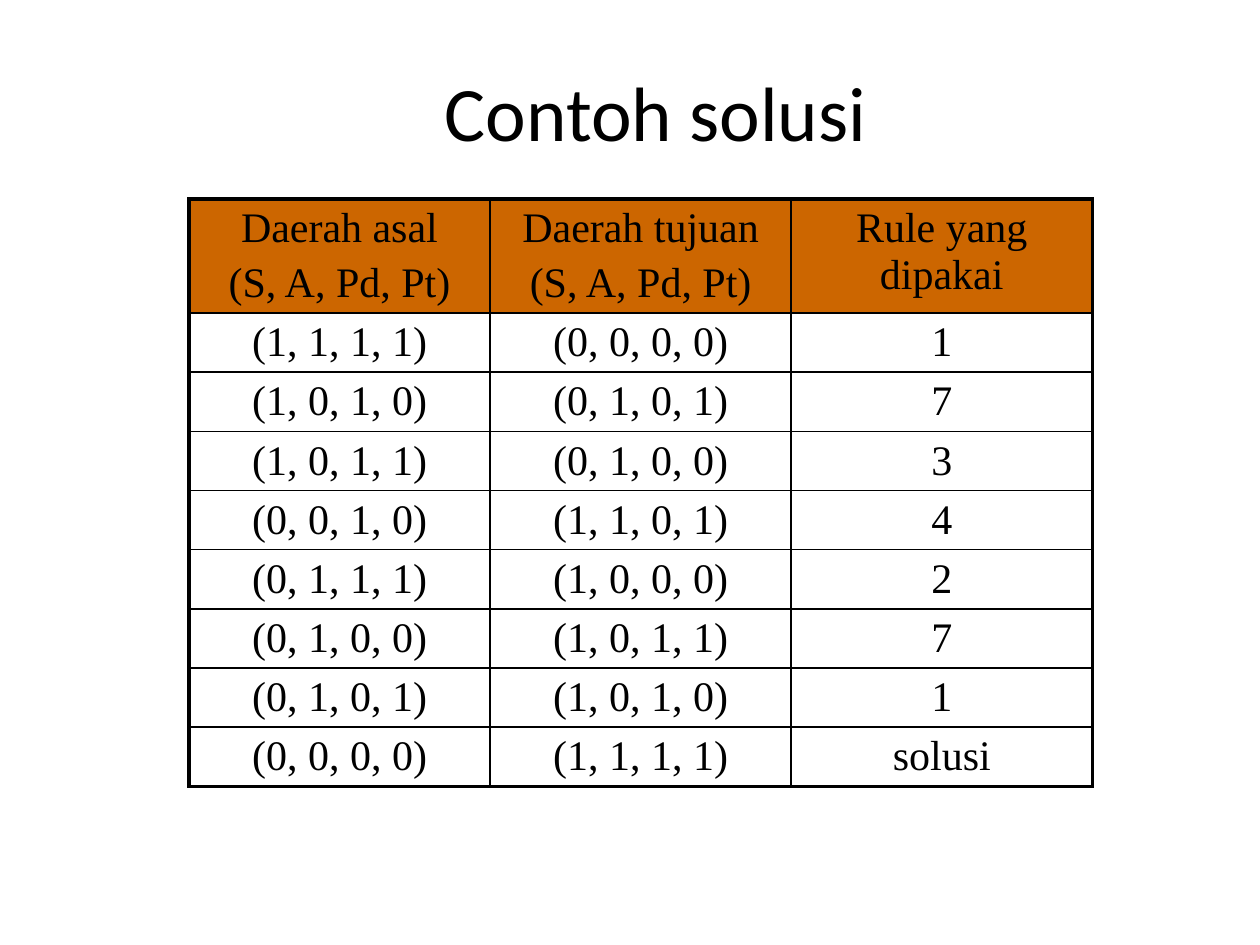
from lxml import etree
from pptx import Presentation
from pptx.dml.color import RGBColor
from pptx.enum.text import MSO_ANCHOR, PP_ALIGN
from pptx.oxml.ns import qn
from pptx.util import Inches, Pt

CENTER = PP_ALIGN.CENTER
MIDDLE = MSO_ANCHOR.MIDDLE
BLACK = RGBColor(0x00, 0x00, 0x00)
ORANGE = RGBColor(0xCC, 0x66, 0x00)

# Content: each cell is a tuple of paragraphs
TITLE = "Contoh solusi"
HEADER = [
    ("Daerah asal", "(S, A, Pd, Pt)"),
    ("Daerah tujuan", "(S, A, Pd, Pt)"),
    ("Rule yang dipakai",),
]
STEPS = [
    ("(1, 1, 1, 1)", "(0, 0, 0, 0)", "1"),
    ("(1, 0, 1, 0)", "(0, 1, 0, 1)", "7"),
    ("(1, 0, 1, 1)", "(0, 1, 0, 0)", "3"),
    ("(0, 0, 1, 0)", "(1, 1, 0, 1)", "4"),
    ("(0, 1, 1, 1)", "(1, 0, 0, 0)", "2"),
    ("(0, 1, 0, 0)", "(1, 0, 1, 1)", "7"),
    ("(0, 1, 0, 1)", "(1, 0, 1, 0)", "1"),
    ("(0, 0, 0, 0)", "(1, 1, 1, 1)", "solusi"),
]
ROWS = [HEADER] + [[(text,) for text in step] for step in STEPS]

# Layout
COLUMN_WIDTH = Inches(2.39)
HEADER_HEIGHT, STEP_HEIGHT = Inches(0.9), Inches(0.47)
OUTER_LINE, INNER_LINE = Pt(2.25), Pt(1)


def add_text(paragraph, text, font_name, size):
    paragraph.alignment = CENTER
    run = paragraph.add_run()
    run.text = text
    run.font.name = font_name
    run.font.size = Pt(size)
    run.font.color.rgb = BLACK


def set_borders(cell, widths):
    properties = cell._tc.get_or_add_tcPr()
    for position, (side, width) in enumerate(widths.items()):
        line = etree.Element(qn(f"a:ln{side}"), w=str(int(width)))
        fill = etree.SubElement(line, qn("a:solidFill"))
        etree.SubElement(fill, qn("a:srgbClr"), val=str(BLACK))
        properties.insert(position, line)


presentation = Presentation()
presentation.slide_width, presentation.slide_height = Inches(10), Inches(7.5)
slide = presentation.slides.add_slide(presentation.slide_layouts[5])

# Title
title = slide.shapes.title
title.left, title.top = Inches(1.58), Inches(0.25)
title.width, title.height = Inches(7.25), Inches(1.25)
title.text_frame.vertical_anchor = MIDDLE
add_text(title.text_frame.paragraphs[0], TITLE, "Calibri", 44)

# Table
last_row, last_column = len(ROWS) - 1, len(HEADER) - 1
table = slide.shapes.add_table(
    len(ROWS), len(HEADER), Inches(1.5), Inches(1.58),
    COLUMN_WIDTH * len(HEADER), HEADER_HEIGHT + STEP_HEIGHT * len(STEPS),
).table
table.first_row = table.horz_banding = False
for column in table.columns:
    column.width = COLUMN_WIDTH

for r, row in enumerate(ROWS):
    table.rows[r].height = STEP_HEIGHT if r else HEADER_HEIGHT
    for c, lines in enumerate(row):
        cell = table.cell(r, c)
        if r == 0:
            cell.fill.solid()
            cell.fill.fore_color.rgb = ORANGE
        else:
            cell.fill.background()
        edges = {"L": c == 0, "R": c == last_column, "T": r == 0, "B": r == last_row}
        set_borders(cell, {side: OUTER_LINE if outer else INNER_LINE
                           for side, outer in edges.items()})
        frame = cell.text_frame
        for i, text in enumerate(lines):
            paragraph = frame.add_paragraph() if i else frame.paragraphs[0]
            paragraph.space_before = Pt(4.8)
            add_text(paragraph, text, "Times New Roman", 24)

presentation.save("out.pptx")
